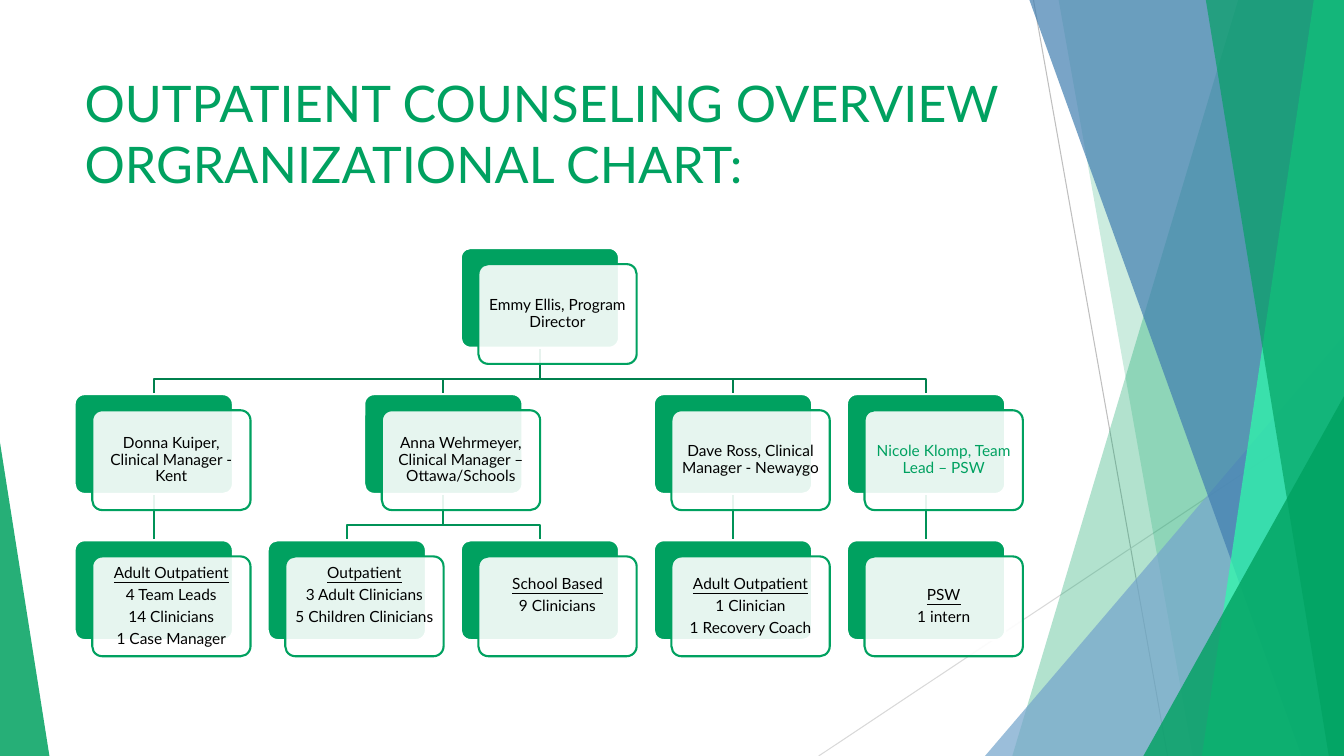
"""Build the outpatient counseling organizational chart slide."""
from lxml.etree import SubElement
from pptx import Presentation
from pptx.dml.color import RGBColor
from pptx.enum.shapes import MSO_CONNECTOR as LINK, MSO_SHAPE as SHAPE
from pptx.enum.text import MSO_ANCHOR as ANCHOR, PP_ALIGN as ALIGN
from pptx.oxml.ns import qn
from pptx.util import Inches, Pt

GREEN, WHITE, BLACK = "00A160", "FFFFFF", "000000"
WIDTH, HEIGHT = 13.33, 7.5

deck = Presentation()
deck.slide_width, deck.slide_height = Inches(WIDTH), Inches(HEIGHT)
shapes = deck.slides.add_slide(deck.slide_layouts[6]).shapes


def paint(shape, fill=None, opacity=100, line=None, weight=1.5):
    """Set fill, opacity and outline, and drop the shadow."""
    if line:
        shape.line.color.rgb = RGBColor.from_string(line)
        shape.line.width = Pt(weight)
    else:
        shape.line.fill.background()
    if fill:
        shape.fill.solid()
        shape.fill.fore_color.rgb = RGBColor.from_string(fill)
        tint = shape.element.spPr.find(qn("a:solidFill"))[0]
        SubElement(tint, qn("a:alpha")).set("val", str(opacity * 1000))
    elif hasattr(shape, "fill"):
        shape.fill.background()
    SubElement(shape.element.spPr, qn("a:effectLst"))


def trace(points, close):
    """Draw a freeform through points given in inches."""
    corners = [(Inches(x), Inches(y)) for x, y in points]
    pen = shapes.build_freeform(*corners[0])
    pen.add_line_segments(corners[1:], close=close)
    return pen.convert_to_shape()


rays = [((10.25, 0, 11.58, HEIGHT), "BFBFBF"), ((WIDTH, 4.03, 8.12, HEIGHT), "D9D9D9")]
for ends, shade in rays:
    ray = shapes.add_connector(LINK.STRAIGHT, *map(Inches, ends))
    paint(ray, line=shade, weight=0.75)

ribbon, peak = ("top_x", "bottom_x"), ("left", "top", "width", "apex")
facets = [
    (ribbon, (12.28, 10.04), GREEN, 30),
    (ribbon, (10.5, 11.83), GREEN, 20),
    (peak, (9.77, 3.33, 3.56, 1), "75A5CC", 72),
    (ribbon, (10.21, 12.91), "417EB0", 70),
    (ribbon, (13.03, 11.92), "2EFFAA", 70),
    (ribbon, (11.96, 13.18), GREEN, 65),
    (peak, (11.34, 3.93, 1.99, 1), GREEN, 80),
    (peak, (0, 4.39, 0.49, 0), GREEN, 85),
]
for form, outline, shade, opacity in facets:
    if form == ribbon:
        top_x, bottom_x = outline
        facet = trace([(top_x, 0), (WIDTH, 0), (WIDTH, HEIGHT), (bottom_x, HEIGHT)], True)
    else:
        left, top, width, apex = outline
        facet = shapes.add_shape(SHAPE.ISOSCELES_TRIANGLE, *map(Inches, (left, top, width, HEIGHT - top)))
        facet.adjustments[0] = apex
    paint(facet, shade, opacity)

heading = shapes.add_textbox(*map(Inches, (0.74, 0.67, 9.4, 1.44))).text_frame
heading.word_wrap = True
heading.text = "OUTPATIENT COUNSELING OVERVIEW\vORGRANIZATIONAL CHART:"
for run in heading.paragraphs[0].runs:
    run.font.name, run.font.size = "Lato", Pt(36)
    run.font.color.rgb = RGBColor.from_string(GREEN)

CHART_LEFT, CHART_TOP, COLUMN, ROW = 0.74, 2.46, 1.915, 1.45
CARD_W, CARD_H, OFFSET_X, OFFSET_Y = 1.57, 0.99, 0.175, 0.16
BEND, INSET, SPARE_LINE = 0.31, 0.05, 0.22

links = [
    (0, 2, 4), (0, 2, 3), (0, 2, 1.5), (0, 2, 0),
    (1, 4, 4), (1, 3, 3), (1, 1.5, 2), (1, 1.5, 1), (1, 0, 0),
]
for row, parent, child in links:
    start_x, end_x = (CHART_LEFT + column * COLUMN + CARD_W / 2 for column in (parent, child))
    start_y = CHART_TOP + row * ROW + CARD_H
    end_y = CHART_TOP + (row + 1) * ROW
    if parent == child:
        link = shapes.add_connector(LINK.STRAIGHT, *map(Inches, (start_x, start_y, end_x, end_y)))
    else:
        bend_y = start_y + BEND
        link = trace([(start_x, start_y), (start_x, bend_y), (end_x, bend_y), (end_x, end_y)], False)
    paint(link, line=("00814D", "009257")[row])

cards = [
    (2, 0, ["Emmy Ellis, Program Director"], BLACK, 0),
    (0, 1, ["Donna Kuiper, Clinical Manager - Kent"], BLACK, 0),
    (0, 2, ["Adult Outpatient", "4 Team Leads", "14 Clinicians", "1 Case Manager"], BLACK, 0),
    (1.5, 1, ["Anna Wehrmeyer, Clinical Manager – Ottawa/Schools"], BLACK, 0),
    (1, 2, ["Outpatient", "3 Adult Clinicians", "5 Children Clinicians"], BLACK, SPARE_LINE),
    (2, 2, ["School Based", "9 Clinicians"], BLACK, SPARE_LINE),
    (3, 1, ["Dave Ross, Clinical Manager - Newaygo"], BLACK, 0),
    (3, 2, ["Adult Outpatient", "1 Clinician", "1 Recovery Coach"], BLACK, 0),
    (4, 1, ["Nicole Klomp, Team Lead – PSW"], GREEN, 0),
    (4, 2, ["PSW", "1 intern"], BLACK, 0),
]
for column, row, lines, ink, lift in cards:
    left, top = CHART_LEFT + column * COLUMN, CHART_TOP + row * ROW
    for shift, fill, opacity, edge in [(0, GREEN, 100, WHITE), (1, WHITE, 90, GREEN)]:
        place = (left + shift * OFFSET_X, top + shift * OFFSET_Y, CARD_W, CARD_H)
        card = shapes.add_shape(SHAPE.ROUNDED_RECTANGLE, *map(Inches, place))
        card.adjustments[0] = 0.1
        paint(card, fill, opacity, edge)
    label = card.text_frame
    label.text = "\n".join(lines)
    label.word_wrap, label.vertical_anchor = True, ANCHOR.MIDDLE
    label.margin_left = label.margin_right = label.margin_top = Inches(INSET)
    label.margin_bottom = Inches(INSET + lift)
    for index, paragraph in enumerate(label.paragraphs):
        paragraph.alignment, paragraph.line_spacing = ALIGN.CENTER, 0.9
        paragraph.space_after = Pt(3.85)
        font = paragraph.runs[0].font
        font.name, font.size = "Lato", Pt(11)
        font.color.rgb = RGBColor.from_string(ink)
        font.underline = row == 2 and index == 0

deck.save("out.pptx")
